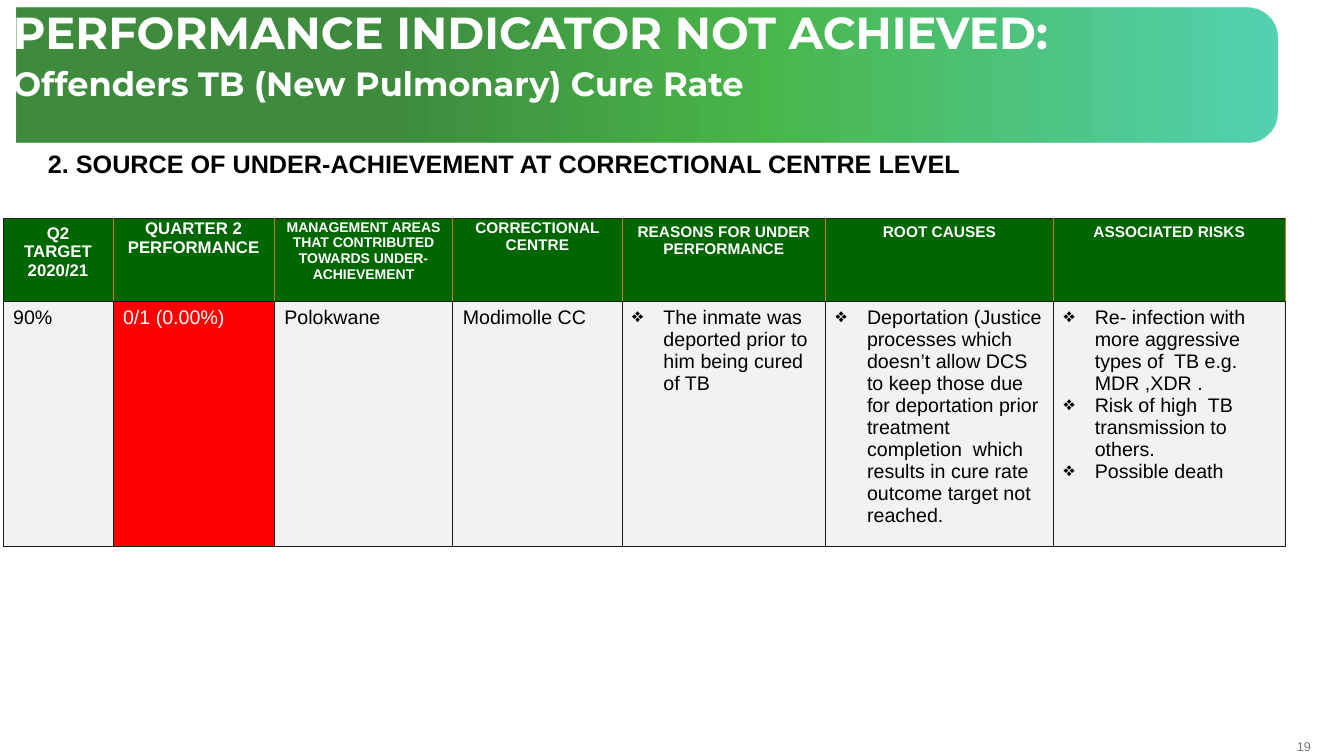
import dataclasses
import typing

import pptx
import pptx.dml.color
import pptx.enum.shapes
import pptx.enum.text
import pptx.oxml
import pptx.oxml.ns
import pptx.util

COLOURS = {
    "white": "FFFFFF", "black": "000000", "page": "77787B",
    "forest": "006600", "leaf": "009900", "teal": "00BC8D",
    "missed": "FF0000", "cell": "F2F2F2", "edge": "1E1918", "divider": "BF7B17",
}
ALIGN = pptx.enum.text.PP_ALIGN
ANCHOR = pptx.enum.text.MSO_ANCHOR

presentation = pptx.Presentation()
presentation.slide_width = pptx.util.Inches(13.33)
presentation.slide_height = pptx.util.Inches(7.5)
slide = presentation.slides.add_slide(presentation.slide_layouts[6])


def across(percent: float) -> int:
    return round(presentation.slide_width * percent / 100)


def down(percent: float) -> int:
    return round(presentation.slide_height * percent / 100)


@dataclasses.dataclass(frozen=True)
class Area:
    left: float
    top: float
    width: float
    height: float

    def box(self) -> tuple[int, int, int, int]:
        return across(self.left), down(self.top), across(self.width), down(self.height)


@dataclasses.dataclass(frozen=True)
class Style:
    size: float
    colour: str
    bold: bool = False
    font: str = "Arial"
    align: typing.Any = ALIGN.LEFT


@dataclasses.dataclass(frozen=True)
class Indicator:
    heading: str
    heading_size: float
    finding: str
    share: float
    tight: bool = False
    bulleted: bool = False
    fill: str = "cell"
    colour: str = "black"


@dataclasses.dataclass(frozen=True)
class Stop:
    position: int
    colour: str
    opacity: int


INDICATORS = (
    Indicator("Q2 TARGET 2020/21", 12, "90%", 8.18),
    Indicator("QUARTER 2\nPERFORMANCE", 12, "0/1 (0.00%)", 12, tight=True,
              fill="missed", colour="white"),
    Indicator("MANAGEMENT AREAS THAT CONTRIBUTED TOWARDS UNDER-ACHIEVEMENT", 10,
              "Polokwane", 13.28, tight=True),
    Indicator("CORRECTIONAL CENTRE", 11, "Modimolle CC", 12.6, tight=True),
    Indicator("REASONS FOR UNDER\nPERFORMANCE", 11,
              "The inmate was deported prior to him being cured of TB", 15.15, bulleted=True),
    Indicator("ROOT CAUSES", 11,
              "Deportation (Justice processes which doesn’t allow DCS to keep those due for "
              "deportation prior treatment completion  which results in cure rate outcome "
              "target not reached.", 16.95, bulleted=True),
    Indicator("ASSOCIATED RISKS", 11,
              "Re- infection with more aggressive types of  TB e.g. MDR ,XDR .\n"
              "Risk of high  TB transmission to others.\nPossible death", 17.25, bulleted=True),
)
ROW_SHARES = (10.93, 32.4)
BANNER_STOPS = (Stop(30, "forest", 75), Stop(59, "leaf", 71), Stop(100, "teal", 67))


def rgb(colour: str) -> pptx.dml.color.RGBColor:
    return pptx.dml.color.RGBColor.from_string(COLOURS[colour])


def element(markup: str) -> typing.Any:
    tag, rest = markup[1:].split(" ", 1)
    return pptx.oxml.parse_xml(f"<{tag} {pptx.oxml.ns.nsdecls('a')} {rest}")


def format_paragraph(paragraph: typing.Any, style: Style) -> None:
    paragraph.alignment = style.align
    for run in paragraph.runs:
        run.font.name = style.font
        run.font.size = pptx.util.Pt(style.size)
        run.font.bold = style.bold
        run.font.color.rgb = rgb(style.colour)


def add_text(area: Area, text: str, styles: tuple[Style, ...], wrap: bool = True) -> typing.Any:
    frame = slide.shapes.add_textbox(*area.box()).text_frame
    frame.word_wrap = wrap
    frame.text = text
    for paragraph, style in zip(frame.paragraphs, styles):
        format_paragraph(paragraph, style)
    return frame


def add_banner(area: Area) -> None:
    left, top, width, height = area.box()
    banner = slide.shapes.add_shape(
        pptx.enum.shapes.MSO_SHAPE.ROUND_2_SAME_RECTANGLE,
        left + (width - height) // 2, top + (height - width) // 2, height, width)
    banner.rotation = 90
    banner.adjustments[0] = 0.23
    banner.adjustments[1] = 0
    banner.shadow.inherit = False
    banner.line.fill.background()
    stops = "".join(
        f'<a:gs pos="{stop.position * 1000}"><a:srgbClr val="{COLOURS[stop.colour]}">'
        f'<a:alpha val="{stop.opacity * 1000}"/></a:srgbClr></a:gs>' for stop in BANNER_STOPS)
    banner.element.spPr.insert(2, element(
        f'<a:gradFill rotWithShape="1"><a:gsLst>{stops}</a:gsLst>'
        '<a:lin ang="16200000" scaled="0"/></a:gradFill>'))


def indent(paragraph: typing.Any, left: int, bullet: str = "") -> None:
    properties = paragraph._p.get_or_add_pPr()
    properties.set("marL", str(left))
    if bullet:
        properties.set("indent", str(-left))
        properties.append(element(f'<a:buChar char="{bullet}"/>'))


def fill_cell(cell: typing.Any, text: str, style: Style, fill: str, sides: dict[str, str]) -> None:
    cell.text_frame.text = text
    for paragraph in cell.text_frame.paragraphs:
        format_paragraph(paragraph, style)
    cell.fill.solid()
    cell.fill.fore_color.rgb = rgb(fill)
    for position, (side, colour) in enumerate(sides.items()):
        cell._tc.get_or_add_tcPr().insert(position, element(
            f'<a:ln{side} w="6350"><a:solidFill><a:srgbClr val="{COLOURS[colour]}"/>'
            f'</a:solidFill></a:ln{side}>'))


def add_indicators(left: float, top: float) -> None:
    area = Area(left, top, sum(item.share for item in INDICATORS), sum(ROW_SHARES))
    table = slide.shapes.add_table(len(ROW_SHARES), len(INDICATORS), *area.box()).table
    table.first_row = table.horz_banding = False
    for row, share in zip(table.rows, ROW_SHARES):
        row.height = down(share)
    edges = dict.fromkeys("LRTB", "edge")
    for number, item in enumerate(INDICATORS):
        table.columns[number].width = across(item.share)
        heading, finding = table.cell(0, number), table.cell(1, number)
        sides = edges | {"R": "divider"} | ({"L": "divider"} if number else {})
        fill_cell(heading, item.heading,
                  Style(item.heading_size, "white", bold=True, align=ALIGN.CENTER),
                  "forest", sides)
        if item.tight:
            heading.margin_left = heading.margin_right = across(0.07)
            heading.margin_top, heading.margin_bottom = down(0.13), 0
        fill_cell(finding, item.finding, Style(14, item.colour), item.fill, edges)
        if item.bulleted:
            for paragraph in finding.text_frame.paragraphs:
                indent(paragraph, across(2.33), "❖")


page = add_text(Area(94.6, 97.73, 2.93, 2), "19", (Style(9, "page", align=ALIGN.RIGHT),))
page.margin_left = page.margin_right = page.margin_top = page.margin_bottom = 0
page.vertical_anchor = ANCHOR.MIDDLE

add_banner(Area(1.24, 1.07, 93.77, 17.73))

source_heading = add_text(
    Area(0.23, 18.93, 77.27, 5.33),
    "2. SOURCE OF UNDER-ACHIEVEMENT AT CORRECTIONAL CENTRE LEVEL",
    (Style(18, "black", bold=True),))
indent(source_heading.paragraphs[0], across(2.6))

add_indicators(0.23, 28.93)

title = add_text(
    Area(0.23, 0.8, 89.87, 7.6),
    "PERFORMANCE INDICATOR NOT ACHIEVED:\nOffenders TB (New Pulmonary) Cure Rate",
    tuple(Style(size, "white", bold=True, font="Montserrat") for size in (32, 24)))
for line in title.paragraphs:
    line.line_spacing = 0.9
    line.space_after = pptx.util.Pt(6)

presentation.save("out.pptx")
